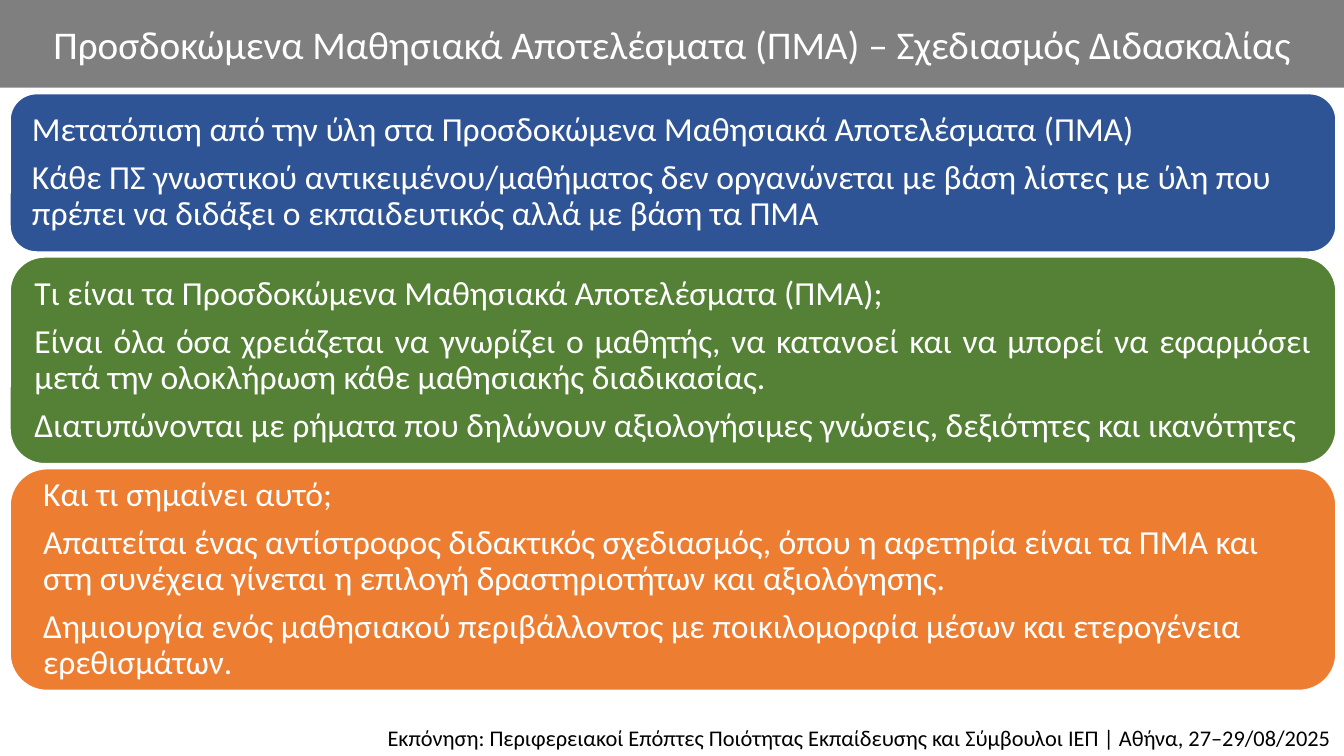
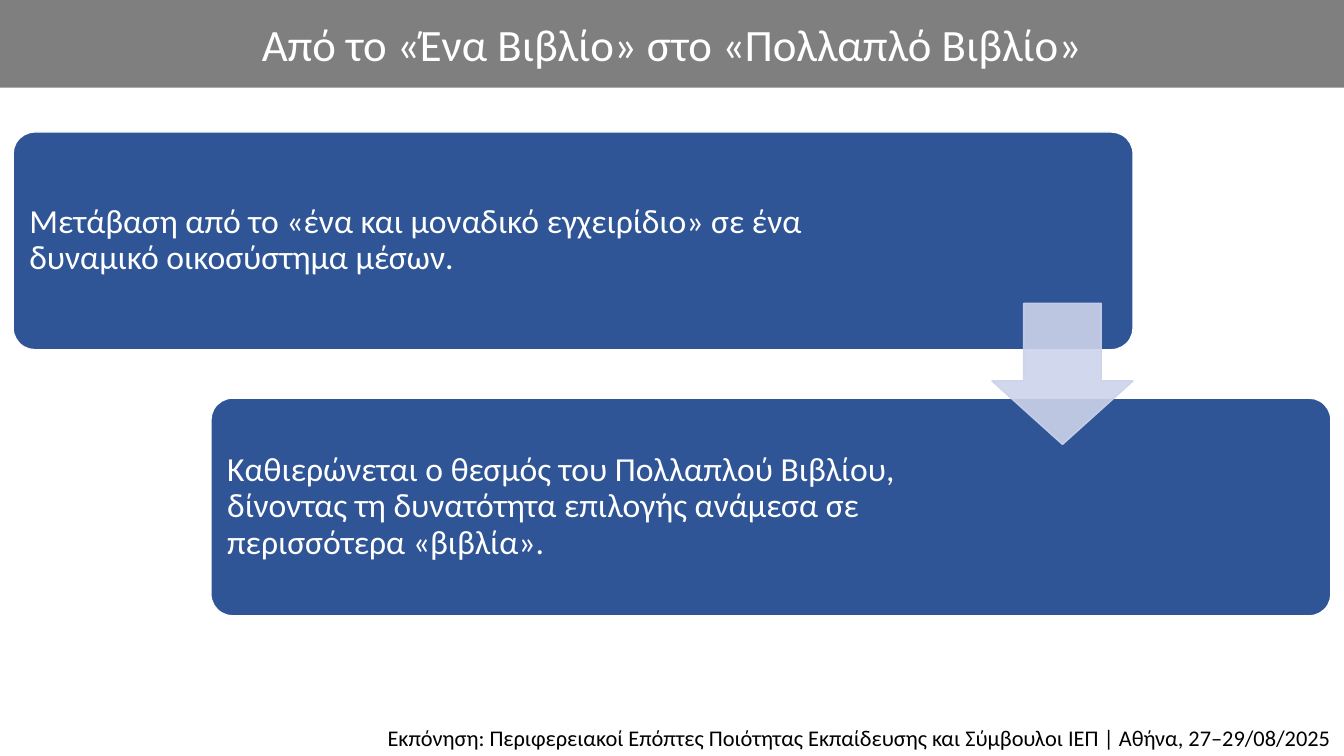
from lxml import etree
from pptx import Presentation
from pptx.dml.color import RGBColor
from pptx.enum import shapes, text
from pptx.oxml import ns
from pptx.util import Inches, Pt

WIDTH, HEIGHT = 13.33, 7.5
FONT = "Calibri"
WHITE = RGBColor(0xFF, 0xFF, 0xFF)
BLACK = RGBColor(0x00, 0x00, 0x00)
GREY = RGBColor(0x7F, 0x7F, 0x7F)
BLUE = RGBColor(0x2F, 0x54, 0x96)
GREEN = RGBColor(0x54, 0x81, 0x35)
ORANGE = RGBColor(0xED, 0x7D, 0x31)
STEP_BLUE = RGBColor(0x2F, 0x55, 0x97)
PALE_BLUE = RGBColor(0xCC, 0xD3, 0xEA)

BAND_HEIGHT = 0.87
FOOTER_TOP, FOOTER_MARGIN = 7.11, 0.03
FOOTER = ("Εκπόνηση: Περιφερειακοί Επόπτες Ποιότητας Εκπαίδευσης και "
          "Σύμβουλοι ΙΕΠ | Αθήνα, 27–29/08/2025")

CARD_LEFT, CARD_TOP, CARD_WIDTH, CARD_GAP = 0.1, 0.93, 13.15, 0.05
STEP_MARGIN, STEP_TOP, STEP_HEIGHT, STEP_GAP = 0.13, 1.31, 2.16, 0.48
STEP_WIDTH = WIDTH * 5 / 6
ARROW_SIZE = 1.4

LEFT, CENTER = text.PP_ALIGN.LEFT, text.PP_ALIGN.CENTER
RIGHT, JUSTIFY = text.PP_ALIGN.RIGHT, text.PP_ALIGN.JUSTIFY
MIDDLE, TOP = text.MSO_ANCHOR.MIDDLE, text.MSO_ANCHOR.TOP

# Height, colour, inset, alignment and paragraphs of each card
CARDS = [
    (1.57, BLUE, 0.14, LEFT, [
        "Μετατόπιση από την ύλη στα Προσδοκώμενα Μαθησιακά Αποτελέσματα (ΠΜΑ)",
        "Κάθε ΠΣ γνωστικού αντικειμένου/μαθήματος δεν οργανώνεται με βάση λίστες "
        "με ύλη που πρέπει να διδάξει ο εκπαιδευτικός αλλά με βάση τα ΠΜΑ"]),
    (2.05, GREEN, 0.14, JUSTIFY, [
        "Τι είναι τα Προσδοκώμενα Μαθησιακά Αποτελέσματα (ΠΜΑ);",
        "Είναι όλα όσα χρειάζεται να γνωρίζει ο μαθητής, να κατανοεί και να μπορεί "
        "να εφαρμόσει μετά την ολοκλήρωση κάθε μαθησιακής διαδικασίας.",
        "Διατυπώνονται με ρήματα που δηλώνουν αξιολογήσιμες γνώσεις, δεξιότητες "
        "και ικανότητες"]),
    (2.2, ORANGE, 0.22, LEFT, [
        "Και τι σημαίνει αυτό;",
        "Απαιτείται ένας αντίστροφος διδακτικός σχεδιασμός, όπου η αφετηρία είναι "
        "τα ΠΜΑ και στη συνέχεια γίνεται η επιλογή δραστηριοτήτων και αξιολόγησης.",
        "Δημιουργία ενός μαθησιακού περιβάλλοντος με ποικιλομορφία μέσων και "
        "ετερογένεια ερεθισμάτων."]),
]

# Left edge, right inset and wording of each step
STEPS = [
    (STEP_MARGIN, 2.21,
     "Μετάβαση από το «ένα και μοναδικό εγχειρίδιο» σε ένα δυναμικό οικοσύστημα "
     "μέσων."),
    (WIDTH - STEP_MARGIN - STEP_WIDTH, 3.47,
     "Καθιερώνεται ο θεσμός του Πολλαπλού Βιβλίου, δίνοντας τη δυνατότητα "
     "επιλογής ανάμεσα σε περισσότερα «βιβλία»."),
]


def add_block(slide, kind, box, fill, outline=None, adjustments=()):
    block = slide.shapes.add_shape(kind, *(Inches(length) for length in box))
    block.shadow.inherit = False
    block.fill.solid()
    block.fill.fore_color.rgb = fill
    if outline is None:
        block.line.fill.background()
    else:
        block.line.color.rgb = outline
        block.line.width = Pt(1)
    for index, value in enumerate(adjustments):
        block.adjustments[index] = value
    return block


def write(block, paragraphs, size, color=WHITE, align=LEFT, anchor=MIDDLE,
          insets=(0.1, 0.05, 0.1, 0.05), spacing=1.0):
    """Fill a block with text; insets run left, top, right, bottom."""
    frame = block.text_frame
    frame.word_wrap = True
    frame.vertical_anchor = anchor
    for side, inset in zip(("left", "top", "right", "bottom"), insets):
        setattr(frame, f"margin_{side}", Inches(inset))
    for index, wording in enumerate(paragraphs):
        paragraph = frame.add_paragraph() if index else frame.paragraphs[0]
        paragraph.text = wording
        paragraph.alignment = align
        paragraph.line_spacing = spacing
        if index:
            paragraph.space_before = Pt(8.4)
        for name, value in {"name": FONT, "size": Pt(size)}.items():
            setattr(paragraph.font, name, value)
        paragraph.font.color.rgb = color


def set_opacity(block, percent):
    """Make the fill and the outline of a block partly transparent."""
    for color in block.fill._xPr.iter(ns.qn("a:srgbClr")):
        etree.SubElement(color, ns.qn("a:alpha"), val=str(percent * 1000))


def add_framed_slide(deck, title, title_size):
    """Add a slide with the title band and the footer."""
    slide = deck.slides.add_slide(deck.slide_layouts[6])
    rectangle = shapes.MSO_SHAPE.RECTANGLE
    band = add_block(slide, rectangle, (0, 0, WIDTH, BAND_HEIGHT), GREY)
    write(band, [title], title_size, align=CENTER)
    footer = add_block(slide, rectangle,
                       (FOOTER_MARGIN, FOOTER_TOP, WIDTH - 2 * FOOTER_MARGIN,
                        HEIGHT - FOOTER_TOP), WHITE)
    write(footer, [FOOTER], 16, BLACK, RIGHT, TOP, spacing=1.1)
    return slide


def add_card(slide, box, fill, rounding, paragraphs, insets, align=LEFT):
    card = add_block(slide, shapes.MSO_SHAPE.ROUNDED_RECTANGLE, box, fill,
                     WHITE, [rounding])
    write(card, paragraphs, 24, align=align, insets=insets, spacing=0.9)


def add_card_stack(slide):
    top = CARD_TOP
    for height, fill, inset, align, paragraphs in CARDS:
        add_card(slide, (CARD_LEFT, top, CARD_WIDTH, height), fill, 0.167,
                 paragraphs, [inset] * 4, align)
        top += height + CARD_GAP


def add_staircase(slide):
    """Add the steps and the arrow centred on the gap between them."""
    for row, (left, right_inset, wording) in enumerate(STEPS):
        top = STEP_TOP + row * (STEP_HEIGHT + STEP_GAP)
        add_card(slide, (left, top, STEP_WIDTH, STEP_HEIGHT), STEP_BLUE, 0.1,
                 [wording], (0.1, 0.1, right_inset, 0.1))
    arrow_left = STEP_MARGIN + STEP_WIDTH - ARROW_SIZE
    arrow_top = STEP_TOP + STEP_HEIGHT + (STEP_GAP - ARROW_SIZE) / 2
    arrow = add_block(slide, shapes.MSO_SHAPE.DOWN_ARROW,
                      (arrow_left, arrow_top, ARROW_SIZE, ARROW_SIZE),
                      PALE_BLUE, PALE_BLUE, [0.55, 0.45])
    set_opacity(arrow, 90)


def main():
    deck = Presentation()
    deck.slide_width, deck.slide_height = Inches(WIDTH), Inches(HEIGHT)
    add_card_stack(add_framed_slide(
        deck,
        "Προσδοκώμενα Μαθησιακά Αποτελέσματα (ΠΜΑ) – Σχεδιασμός Διδασκαλίας",
        28))
    add_staircase(add_framed_slide(
        deck, "Από το «Ένα Βιβλίο» στο «Πολλαπλό Βιβλίο»", 32))
    deck.save("out.pptx")


if __name__ == "__main__":
    main()
